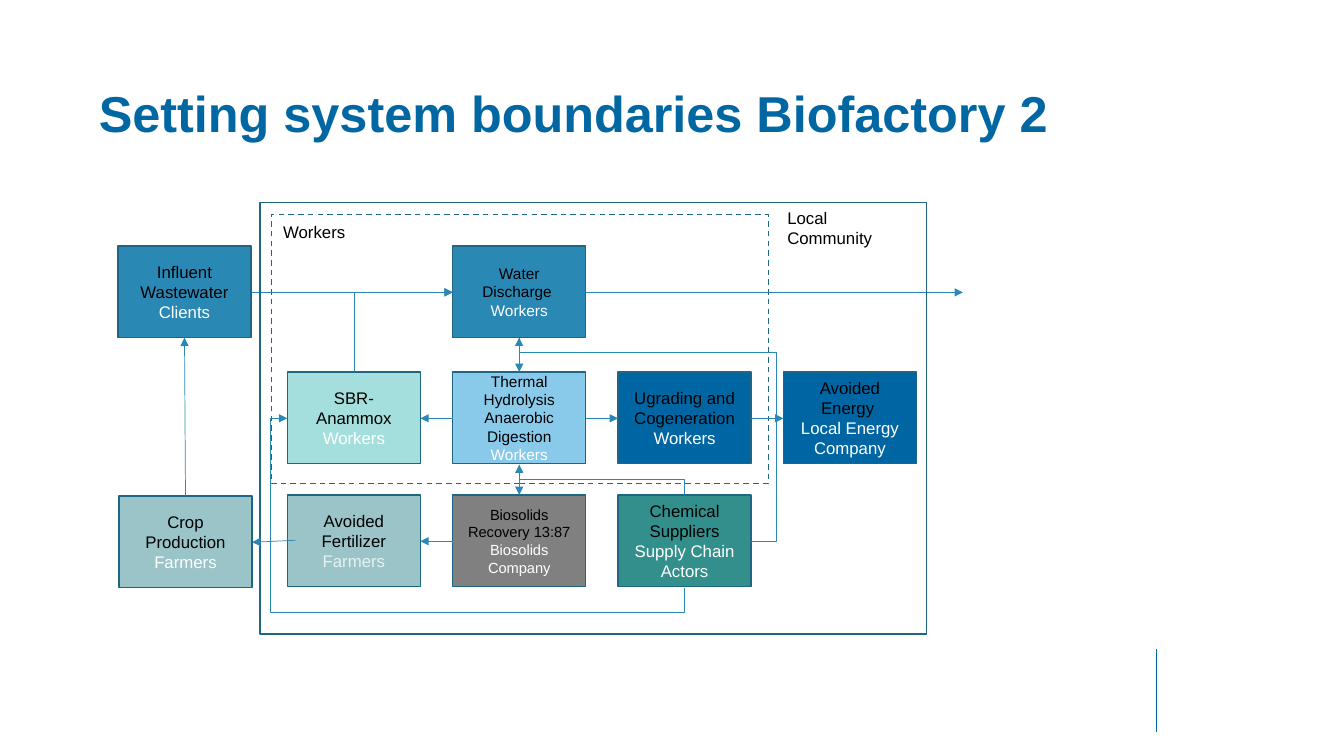
from dataclasses import dataclass
from math import cos, radians, sin

from lxml import etree
from pptx import Presentation
from pptx.dml.color import RGBColor
from pptx.enum.dml import MSO_LINE
from pptx.enum.shapes import MSO_CONNECTOR, MSO_SHAPE
from pptx.enum.text import MSO_ANCHOR, MSO_AUTO_SIZE, PP_ALIGN
from pptx.oxml.ns import qn
from pptx.slide import Slide
from pptx.util import Inches, Pt

RECT = MSO_SHAPE.RECTANGLE
STRAIGHT, ELBOW = MSO_CONNECTOR.STRAIGHT, MSO_CONNECTOR.ELBOW
DASH = MSO_LINE.DASH
MIDDLE = MSO_ANCHOR.MIDDLE
LEFT, CENTER = PP_ALIGN.LEFT, PP_ALIGN.CENTER
NO_FIT = MSO_AUTO_SIZE.NONE


@dataclass(frozen=True)
class Theme:
    font: str = "Arial"
    title: str = "0067A3"
    edge: str = "1F6586"
    wire: str = "2A88B5"
    black: str = "000000"
    white: str = "FFFFFF"
    pale: str = "E7F1F2"
    blue: str = "2A88B5"
    deep: str = "0066A3"
    sky: str = "89CAEB"
    mint: str = "A5DFDD"
    sage: str = "9AC4C8"
    teal: str = "338F8C"
    gray: str = "808080"
    head: float = 36
    body: float = 12
    small: float = 11
    least: float = 10.5
    thin: float = 0.5
    edge_width: float = 1


THEME = Theme()
BOX_W, BOX_H = 1.32, 0.91
COLS = [2.85 + 1.64 * i for i in range(4)]
TOP, MID, LOW = 2.44, 3.69, 4.91


@dataclass(frozen=True)
class Box:
    left: float
    top: float
    label: str
    role: str
    fill: str
    size: float = THEME.body
    ink: str = THEME.white
    joined: bool = False


@dataclass(frozen=True)
class Wire:
    start: tuple[float, float]
    end: tuple[float, float]
    color: str = THEME.wire
    arrow: bool = True


@dataclass(frozen=True)
class Bend:
    wire: Wire
    preset: str
    turn: int = 0
    adjust: tuple[int, ...] = ()


@dataclass(frozen=True)
class Frame:
    left: float
    top: float
    width: float
    height: float
    dashed: bool = False


@dataclass(frozen=True)
class Label:
    left: float
    top: float
    width: float
    text: str


STREAMS = [
    Wire((1.78, 2.9), (4.49, 2.9)),
    Wire((5.81, 2.9), (9.55, 2.9)),
]
BOXES = [
    Box(1.17, TOP, "Influent Wastewater", "Clients", THEME.blue),
    Box(COLS[1], TOP, "Water Discharge ", "Workers", THEME.blue, THEME.small),
    Box(COLS[0], MID, "SBR-Anammox", "Workers", THEME.mint),
    Box(COLS[1], MID, "Thermal Hydrolysis Anaerobic Digestion ", "Workers",
        THEME.sky, THEME.small, joined=True),
    Box(COLS[2], MID, "Ugrading and Cogeneration", "Workers", THEME.deep),
    Box(COLS[3], MID, "Avoided Energy ", "Local Energy Company", THEME.deep),
    Box(1.18, 4.92, "Crop Production", "Farmers", THEME.sage),
    Box(COLS[0], LOW, "Avoided Fertilizer", "Farmers", THEME.sage, ink=THEME.pale),
    Box(COLS[1], LOW, "Biosolids Recovery 13:87", "Biosolids Company",
        THEME.gray, THEME.least),
    Box(COLS[2], LOW, "Chemical Suppliers", "Supply Chain Actors", THEME.teal),
]
FRAMES = [
    Frame(2.58, 2.01, 6.61, 4.28),
    Frame(2.69, 2.13, 4.93, 2.67, dashed=True),
]
LABELS = [
    Label(7.71, 2.01, 1.38, "Local Community"),
    Label(2.71, 2.15, 2.68, "Workers"),
]
WIRES = [
    Wire((5.15, 3.35), (5.15, 3.69)),
    Wire((5.81, 4.15), (6.13, 4.15)),
    Wire((5.15, 4.61), (5.15, 4.91)),
    Wire((4.49, 4.15), (4.17, 4.15)),
    Wire((7.45, 4.15), (7.77, 4.15)),
    Wire((4.49, 5.37), (4.17, 5.37)),
    Wire((2.93, 5.36), (2.5, 5.38)),
    Wire((1.84, 4.92), (1.83, 3.35)),
    Wire((11.47, 6.44), (11.47, 7.26), THEME.title, arrow=False),
]
BENDS = [
    Bend(Wire((3.51, 3.69), (4.49, 2.9)), "bentConnector2", 90),
    Bend(Wire((6.79, 4.91), (5.15, 4.61)), "bentConnector3", 270, (50000,)),
    Bend(Wire((7.45, 5.37), (5.15, 3.35)), "bentConnector4", 0, (-10900, 92600)),
    Bend(Wire((6.79, 5.83), (2.85, 4.15)), "bentConnector4", 90, (-14900, 104200)),
]


def style(part, size: float, color: str, bold: bool = False) -> None:
    """Format the font of a run or paragraph."""
    part.font.name = THEME.font
    part.font.size = Pt(size)
    part.font.bold = bold
    part.font.color.rgb = RGBColor.from_string(color)


def draw_title(slide: Slide, text: str) -> None:
    title = slide.shapes.title
    title.left, title.top = Inches(0.88), Inches(0.84)
    title.width, title.height = Inches(11.81), Inches(0.62)
    frame = title.text_frame
    frame.text = text
    frame.auto_size = NO_FIT
    frame.vertical_anchor = MIDDLE
    line = frame.paragraphs[0]
    line.alignment = LEFT
    line.line_spacing = 0.9
    line.space_before = Pt(0)
    style(line.runs[0], THEME.head, THEME.title, bold=True)


def add_rect(slide: Slide, left: float, top: float, width: float, height: float):
    shape = slide.shapes.add_shape(
        RECT, Inches(left), Inches(top), Inches(width), Inches(height))
    shape.shadow.inherit = False
    shape.line.color.rgb = RGBColor.from_string(THEME.edge)
    shape.line.width = Pt(THEME.edge_width)
    return shape


def draw_box(slide: Slide, box: Box) -> None:
    shape = add_rect(slide, box.left, box.top, BOX_W, BOX_H)
    shape.fill.solid()
    shape.fill.fore_color.rgb = RGBColor.from_string(box.fill)
    frame = shape.text_frame
    frame.word_wrap = True
    frame.vertical_anchor = MIDDLE
    first = frame.paragraphs[0]
    last = first if box.joined else frame.add_paragraph()
    for line, text, ink in ((first, box.label, THEME.black), (last, box.role, box.ink)):
        line.alignment = CENTER
        run = line.add_run()
        run.text = text
        style(run, box.size, ink)


def draw_frame(slide: Slide, frame: Frame) -> None:
    shape = add_rect(slide, frame.left, frame.top, frame.width, frame.height)
    shape.fill.background()
    if frame.dashed:
        shape.line.dash_style = DASH


def draw_label(slide: Slide, label: Label) -> None:
    box = slide.shapes.add_textbox(
        Inches(label.left), Inches(label.top), Inches(label.width), Inches(0.3))
    frame = box.text_frame
    frame.word_wrap = True
    frame.text = label.text
    style(frame.paragraphs[0].runs[0], THEME.body, THEME.black)


def draw_wire(slide: Slide, wire: Wire, kind=STRAIGHT):
    ends = [Inches(v) for v in (*wire.start, *wire.end)]
    link = slide.shapes.add_connector(kind, *ends)
    link.line.color.rgb = RGBColor.from_string(wire.color)
    link.line.width = Pt(THEME.thin)
    props = link.element.spPr
    if wire.arrow:
        etree.SubElement(props.find(qn("a:ln")), qn("a:tailEnd"), type="triangle")
    etree.SubElement(props, qn("a:effectLst"))
    return link


def draw_bend(slide: Slide, bend: Bend) -> None:
    """Draw an elbow whose ends land in place once it is turned."""
    (x1, y1), (x2, y2) = bend.wire.start, bend.wire.end
    mid_x, mid_y = (x1 + x2) / 2, (y1 + y2) / 2
    c, s = cos(radians(bend.turn)), sin(radians(bend.turn))
    dx = (x1 - mid_x) * c + (y1 - mid_y) * s
    dy = (y1 - mid_y) * c - (x1 - mid_x) * s
    flat = Wire((mid_x + dx, mid_y + dy), (mid_x - dx, mid_y - dy))
    props = draw_wire(slide, flat, ELBOW).element.spPr
    props.find(qn("a:xfrm")).set("rot", str(bend.turn * 60000))
    shape = props.find(qn("a:prstGeom"))
    shape.set("prst", bend.preset)
    for i, value in enumerate(bend.adjust, 1):
        etree.SubElement(shape.find(qn("a:avLst")), qn("a:gd"),
                         name=f"adj{i}" if len(bend.adjust) > 1 else "adj1",
                         fmla=f"val {value}")


def main() -> None:
    deck = Presentation()
    deck.slide_width, deck.slide_height = Inches(13.33), Inches(7.5)
    slide = deck.slides.add_slide(deck.slide_layouts[5])
    draw_title(slide, "Setting system boundaries Biofactory 2")
    groups = [(draw_wire, STREAMS), (draw_box, BOXES), (draw_frame, FRAMES),
              (draw_label, LABELS), (draw_wire, WIRES), (draw_bend, BENDS)]
    for draw, items in groups:
        for item in items:
            draw(slide, item)
    deck.save("out.pptx")


if __name__ == "__main__":
    main()
